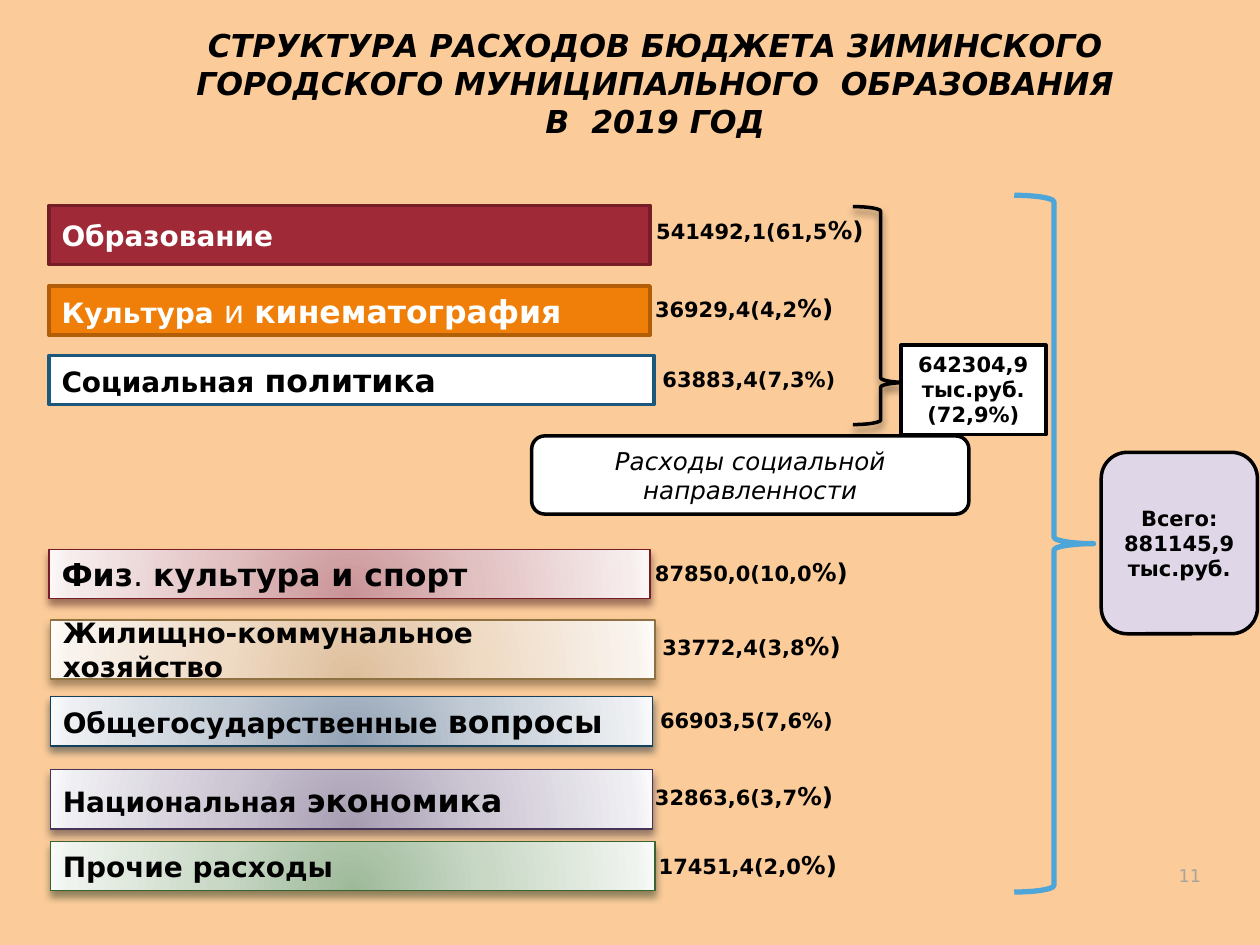
from dataclasses import dataclass

from pptx import Presentation
from pptx.dml.color import RGBColor
from pptx.enum.shapes import MSO_SHAPE
from pptx.enum.text import MSO_ANCHOR, MSO_AUTO_SIZE, PP_ALIGN
from pptx.oxml import parse_xml
from pptx.oxml.ns import nsdecls, qn
from pptx.util import Inches, Pt

RECT = MSO_SHAPE.RECTANGLE
ROUND = MSO_SHAPE.ROUNDED_RECTANGLE
BRACE = MSO_SHAPE.RIGHT_BRACE
TOP, MIDDLE, BOTTOM = MSO_ANCHOR.TOP, MSO_ANCHOR.MIDDLE, MSO_ANCHOR.BOTTOM
LEFT, CENTER, RIGHT = PP_ALIGN.LEFT, PP_ALIGN.CENTER, PP_ALIGN.RIGHT
FIXED = MSO_AUTO_SIZE.NONE


@dataclass(frozen=True)
class Theme:
    font: str = "DejaVu Sans"
    back: str = "FBCC9A"
    ink: str = "000000"
    paper: str = "FFFFFF"
    total: str = "DFD7E7"
    brace: str = "4EA5D8"
    muted: str = "A8A49B"
    tiny: int = 10
    small: int = 12
    note: int = 14
    label: int = 16
    large: int = 18
    thin: float = 0.75
    line: int = 2
    thick: int = 3
    stops: tuple = (0, 43, 93, 100)


class Painter:
    def __init__(self, slide, theme):
        self.slide = slide
        self.theme = theme
        fill = slide.background.fill
        fill.solid()
        fill.fore_color.rgb = RGBColor.from_string(theme.back)

    def letter(self, frame, paras, size, color=None, bold=True, italic=False,
               align=CENTER, anchor=MIDDLE):
        frame.word_wrap = True
        frame.auto_size = FIXED
        frame.vertical_anchor = anchor
        for index, runs in enumerate(paras):
            para = frame.add_paragraph() if index else frame.paragraphs[0]
            para.alignment = align
            font = para.font
            font.name = self.theme.font
            font.color.rgb = RGBColor.from_string(color or self.theme.ink)
            font.italic = italic
            if len({part[1:] for part in runs}) == 1:
                font.size, font.bold = Pt(size), bold
            for text, *style in runs:
                if text == "\n":
                    para.add_line_break()
                    continue
                run = para.add_run()
                run.text = text
                if style:
                    run.font.size, run.font.bold = Pt(style[0]), style[1]

    def title(self, box, lines):
        title = self.slide.shapes.title
        title.left, title.top, title.width, title.height = map(Inches, box)
        self.letter(title.text_frame, [[(line,)] for line in lines],
                    self.theme.large, italic=True, anchor=TOP)

    def text(self, box, runs, size, **style):
        area = self.slide.shapes.add_textbox(*map(Inches, box))
        self.letter(area.text_frame, [runs], size, **style)

    def shape(self, kind, box, line, width, fill=None):
        item = self.slide.shapes.add_shape(kind, *map(Inches, box))
        item.shadow.inherit = False
        if fill:
            item.fill.solid()
            item.fill.fore_color.rgb = RGBColor.from_string(fill)
        else:
            item.fill.background()
        item.line.color.rgb = RGBColor.from_string(line)
        item.line.width = Pt(width)
        return item

    def glow(self, item, colors):
        stops = "".join(
            f'<a:gs pos="{stop * 1000}"><a:srgbClr val="{color}"/></a:gs>'
            for stop, color in zip(self.theme.stops, colors))
        props = item.element.spPr
        props.replace(props.find(qn("a:noFill")), parse_xml(
            f'<a:gradFill {nsdecls("a")} rotWithShape="1"><a:gsLst>{stops}</a:gsLst>'
            '<a:path path="circle"><a:fillToRect l="50000" t="130000" '
            'r="50000" b="-30000"/></a:path></a:gradFill>'))

    def shade(self, item, color):
        item.element.spPr.find(qn("a:effectLst")).append(parse_xml(
            f'<a:outerShdw {nsdecls("a")} blurRad="{Pt(4.5)}" dist="{Pt(3)}" '
            f'dir="5400000" rotWithShape="0"><a:srgbClr val="{color}">'
            '<a:alpha val="48000"/></a:srgbClr></a:outerShdw>'))

    def bar(self, box, fill, line, shade, runs, color):
        soft = isinstance(fill, tuple)
        width = self.theme.thin if soft else self.theme.line
        item = self.shape(RECT, box, line, width, None if soft else fill)
        if soft:
            self.glow(item, fill)
            self.shade(item, shade)
        self.letter(item.text_frame, [runs], self.theme.label, color, align=LEFT)

    def value(self, box, number, big):
        small, note = self.theme.small, self.theme.note
        runs = [(number, small, True), ("%)", note, True)] if big else [(number + "%)",)]
        self.text(box, runs, small, align=LEFT, anchor=TOP)

    def panel(self, kind, box, fill, paras, size, **style):
        item = self.shape(kind, box, self.theme.ink, self.theme.line, fill)
        self.letter(item.text_frame, paras, size, **style)

    def brace(self, box, color, width, point=0.5):
        item = self.shape(BRACE, box, color, width)
        item.adjustments[0] = 0.083
        item.adjustments[1] = point
        return item


THEME = Theme()
MID, BIG = THEME.label, THEME.large


def pair(first, last, link=" ", size=MID):
    return [(first, size, True), (link, BIG, False), (last, BIG, True)]


BARS = [
    ((0.39, 1.63, 4.77, 0.47), "9F2936", "761E28", None,
     [("Образование",)], THEME.paper),
    ((0.39, 2.27, 4.77, 0.39), "F07F09", "B25E07", None,
     pair("Культура", "кинематография", " и "), THEME.paper),
    ((0.39, 2.82, 4.8, 0.39), THEME.paper, "1B587C", None,
     pair("Социальная", "политика"), THEME.ink),
    ((0.39, 4.36, 4.77, 0.39), ("C99396", "E2C1C2", "F6ECEC", "FDF8F8"),
     "771D27", "390D12", pair("Физ", "культура и спорт", ". ", BIG), THEME.ink),
    ((0.4, 4.92, 4.8, 0.47), ("DEBF9C", "EFDAC4", "F9F3ED", "FEFBF8"),
     "907141", "45361E", [("Жилищно-коммунальное хозяйство",)], THEME.ink),
    ((0.4, 5.53, 4.78, 0.39), ("94A3B5", "C3CCD6", "EDEFF2", "F9FAFB"),
     "13415D", "091F2C", pair("Общегосударственные", "вопросы"), THEME.ink),
    ((0.4, 6.11, 4.78, 0.47), ("A69DB2", "CDC7D4", "EFEEF2", "FAF9FB"),
     "473559", "22192B", pair("Национальная", "экономика"), THEME.ink),
    ((0.4, 6.68, 4.8, 0.39), ("9EB99A", "C8D8C5", "EEF3ED", "F9FBF9"),
     "396330", "1B2F17", [("Прочие расходы",)], THEME.ink),
]

VALUES = [
    ((5.11, 1.66, 2, 0.34), "541492,1(61,5", True),
    ((5.1, 2.28, 1.79, 0.33), "36929,4(4,2", True),
    ((5.16, 2.86, 1.73, 0.3), "63883,4(7,3", False),
    ((5.1, 4.37, 1.86, 0.34), "87850,0(10,0", True),
    ((5.16, 4.96, 1.84, 0.33), "33772,4(3,8", True),
    ((5.14, 5.57, 1.72, 0.3), "66903,5(7,6", False),
    ((5.1, 6.15, 1.74, 0.34), "32863,6(3,7", True),
    ((5.13, 6.7, 1.76, 0.33), "17451,4(2,0", True),
]


def main():
    deck = Presentation()
    deck.slide_width, deck.slide_height = Inches(10), Inches(7.5)
    page = Painter(deck.slides.add_slide(deck.slide_layouts[5]), THEME)

    page.text((9.13, 6.68, 0.5, 0.4), [("11",)], THEME.tiny, color=THEME.muted,
              bold=False, align=RIGHT, anchor=BOTTOM)
    page.title((0.83, 0.16, 8.74, 1.01), [
        "СТРУКТУРА РАСХОДОВ БЮДЖЕТА ЗИМИНСКОГО "
        "ГОРОДСКОГО МУНИЦИПАЛЬНОГО  ОБРАЗОВАНИЯ",
        "В  2019 ГОД"])
    for bar in BARS:
        page.bar(*bar)
    social = page.brace((6.77, 1.64, 0.44, 1.73), THEME.ink, THEME.line, 0.807)
    page.shade(social, THEME.ink)
    page.panel(RECT, (7.15, 2.74, 1.15, 0.71), THEME.paper,
               [[("642304,9",), ("\n",), ("тыс.руб. (72,9%)",)]],
               THEME.small, anchor=TOP)
    for value in VALUES:
        page.value(*value)
    page.panel(ROUND, (4.22, 3.46, 3.47, 0.62), THEME.paper,
               [[("Расходы социальной направленности",)]],
               THEME.note, bold=False, italic=True)
    page.panel(ROUND, (8.74, 3.59, 1.24, 1.44), THEME.total,
               [[("Всего: 881145,9",)], [("тыс.руб.",)]], THEME.small)
    page.brace((8.05, 1.55, 0.63, 5.53), THEME.brace, THEME.thick)
    deck.save("out.pptx")


if __name__ == "__main__":
    main()
